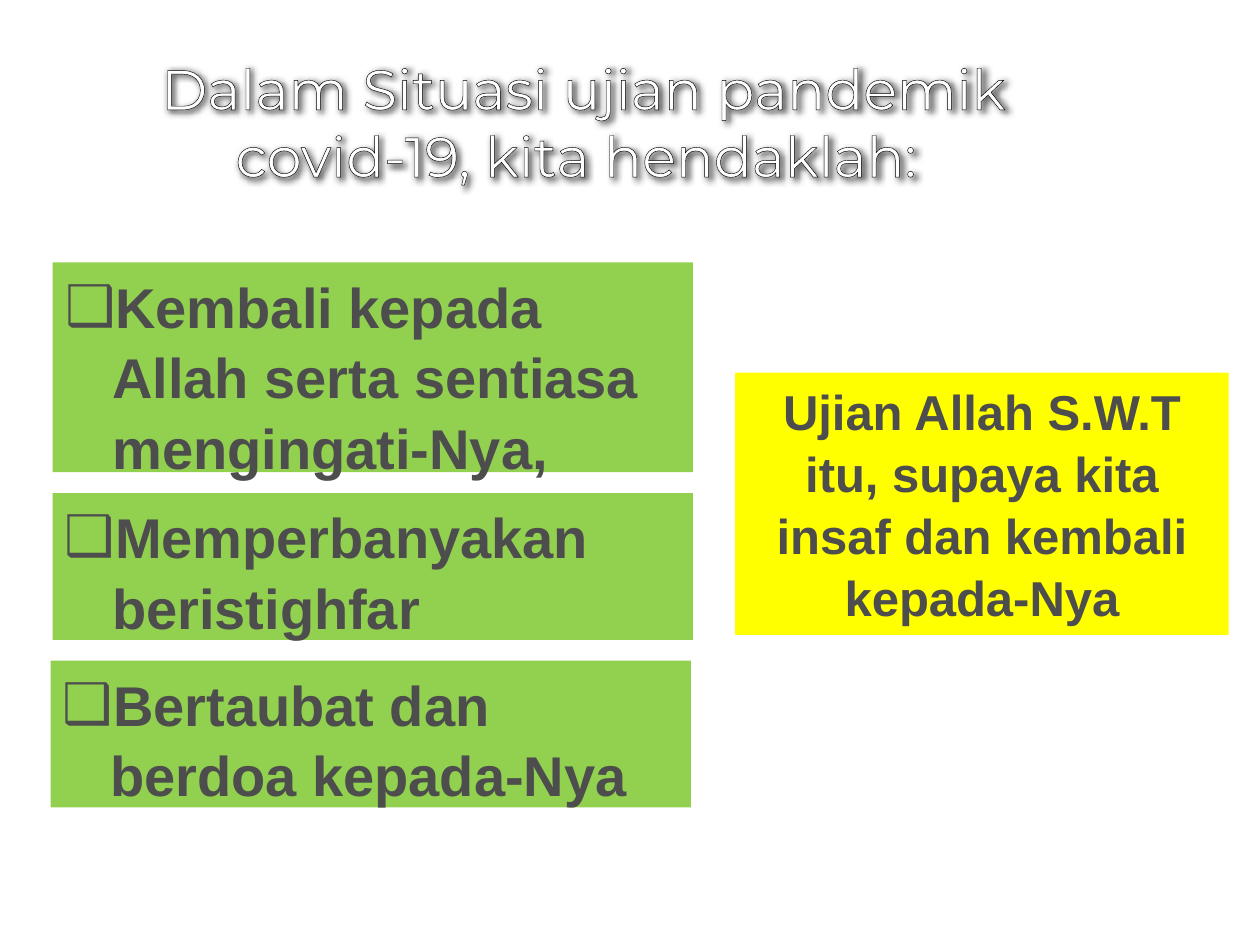
from dataclasses import dataclass

from lxml.etree import SubElement
from pptx import Presentation
from pptx.dml.color import RGBColor
from pptx.enum.shapes import MSO_SHAPE
from pptx.enum.text import MSO_ANCHOR, MSO_AUTO_SIZE, PP_ALIGN
from pptx.oxml.ns import qn
from pptx.util import Cm, Pt


@dataclass(frozen=True)
class Theme:
    title_font: str = "Montserrat"
    body_font: str = "Arial"
    title_size: int = 32
    advice_size: int = 32
    lesson_size: int = 28
    title: str = "FFFFFF"
    outline: str = "000000"
    text: str = "4D4D4D"
    advice: str = "92D050"
    lesson: str = "FFFF00"


THEME = Theme()
GAP = 0.42
# Wording, height and left offset of each advice box
ADVICE = [
    ("Kembali kepada Allah serta sentiasa mengingati-Nya,", 4.23, 0),
    ("Memperbanyakan beristighfar", 2.96, 0),
    ("Bertaubat dan berdoa kepada-Nya", 2.96, -0.04),
]


def place(s, left, top, width, height):
    s.left, s.top, s.width, s.height = map(Cm, (left, top, width, height))


def add_text(p, text, font, size, color, bold):
    r = p.add_run()
    r.text = text
    r.font.name, r.font.size, r.font.bold = font, Pt(size), bold
    r.font.color.rgb = RGBColor.from_string(color)
    return r


def set_bullet(p, char=None):
    pPr = p._p.get_or_add_pPr()
    indent = Cm(0.95) if char else 0
    pPr.set("marL", str(indent))
    pPr.set("indent", str(-indent))
    if char:
        SubElement(pPr, qn("a:buFont"), typeface=THEME.body_font)
        SubElement(pPr, qn("a:buChar"), char=char)
    else:
        SubElement(pPr, qn("a:buNone"))


def fill_panel(s, text, color, size, align, bullet=None):
    s.fill.solid()
    s.fill.fore_color.rgb = RGBColor.from_string(color)
    s.line.fill.background()
    tf = s.text_frame
    tf.word_wrap = True
    tf.auto_size = MSO_AUTO_SIZE.NONE
    tf.vertical_anchor = MSO_ANCHOR.TOP
    p = tf.paragraphs[0]
    set_bullet(p, bullet)
    p.alignment = align
    p.space_before = Pt(0)
    p.line_spacing = 1.05
    add_text(p, text, THEME.body_font, size, THEME.text, True)


def build_title(s, left, top, width, height):
    place(s, left, top, width, height)
    tf = s.text_frame
    tf.word_wrap = True
    tf.auto_size = MSO_AUTO_SIZE.NONE
    tf.vertical_anchor = MSO_ANCHOR.MIDDLE
    p = tf.paragraphs[0]
    p.alignment = PP_ALIGN.CENTER
    r = add_text(p, "Dalam Situasi ujian pandemik covid-19, kita hendaklah: ",
                 THEME.title_font, THEME.title_size, THEME.title, False)
    # Thin outline on the letters, which comes first in the run properties
    rPr = r._r.get_or_add_rPr()
    ln = SubElement(rPr, qn("a:ln"), w=str(Pt(0.75)))
    SubElement(SubElement(ln, qn("a:solidFill")), qn("a:srgbClr"), val=THEME.outline)
    rPr.insert(0, ln)
    # Soft shadow behind the letters
    effects = SubElement(s._element.spPr, qn("a:effectLst"))
    shadow = SubElement(effects, qn("a:outerShdw"), blurRad=str(Pt(4)),
                        dist=str(Pt(1.5)), dir="2700000", algn="tl", rotWithShape="0")
    color = SubElement(shadow, qn("a:srgbClr"), val=THEME.outline)
    SubElement(color, qn("a:alpha"), val="60000")


def build_advice(slide, body, left, top, width):
    for i, (text, height, shift) in enumerate(ADVICE):
        if i == 0:
            s = body
        else:
            s = slide.shapes.add_shape(MSO_SHAPE.RECTANGLE, 0, 0, 0, 0)
            s.shadow.inherit = False
        place(s, left + shift, top, width, height)
        fill_panel(s, text, THEME.advice, THEME.advice_size, PP_ALIGN.LEFT, "❑")
        top += height + GAP


def build_lesson(s, left, top, width, height):
    place(s, left, top, width, height)
    fill_panel(s, "Ujian Allah S.W.T itu, supaya kita insaf dan kembali kepada-Nya",
               THEME.lesson, THEME.lesson_size, PP_ALIGN.CENTER)


def main():
    prs = Presentation()
    prs.slide_width, prs.slide_height = Cm(25.4), Cm(19.05)
    slide = prs.slides.add_slide(prs.slide_layouts[3])
    title, body, lesson = slide.placeholders
    build_title(title, 1.69, 0.64, 20.15, 3.6)
    build_advice(slide, body, 1.06, 5.29, 12.91)
    build_lesson(lesson, 14.82, 7.51, 9.95, 5.29)
    prs.save("out.pptx")


if __name__ == "__main__":
    main()
